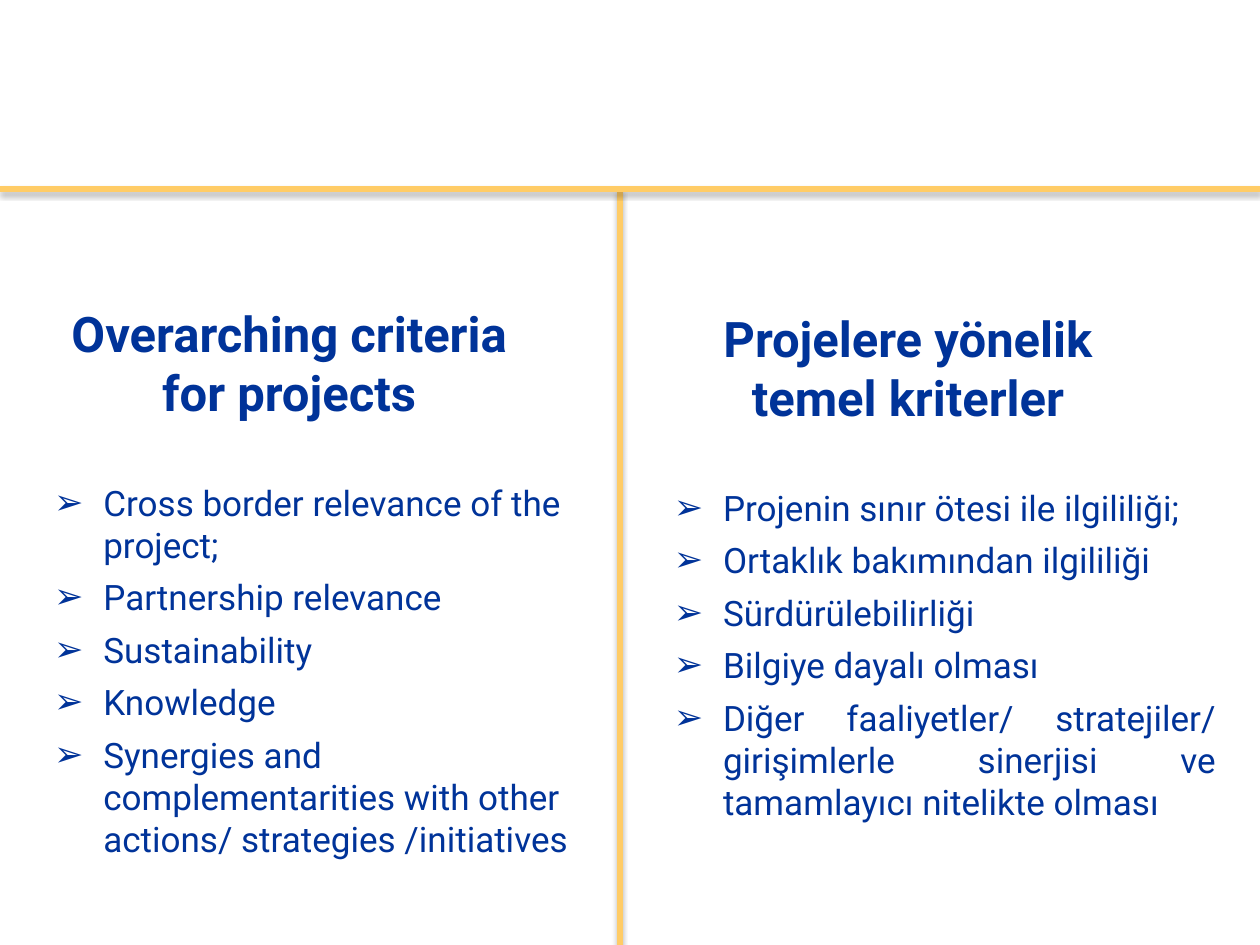
from dataclasses import dataclass

from lxml import etree
from pptx import Presentation
from pptx import util as u
from pptx.dml.color import RGBColor
from pptx.enum import shapes, text
from pptx.oxml import ns


@dataclass(frozen=True)
class Theme:
    font: str = "Roboto"
    ink: RGBColor = RGBColor(0x00, 0x33, 0x99)
    rule: RGBColor = RGBColor(0xFF, 0xCC, 0x66)
    shadow: str = "000000"
    heading_size: u.Pt = u.Pt(28)
    list_size: u.Pt = u.Pt(20)
    rule_width: u.Pt = u.Pt(3)
    item_gap: u.Pt = u.Pt(6)


@dataclass(frozen=True)
class Column:
    heading: str
    items: tuple[str, ...]
    heading_left: float
    heading_top: float
    list_left: float
    list_top: float
    alignment: text.PP_ALIGN


THEME = Theme()
INDENT = u.Inches(0.39)
HEADING_SIZE = (3.75, 2.25)
LIST_SIZE = (4.5, 3.32)
RULE_TOP = 1.5
DIVIDER_LEFT = 4.92

ENGLISH = Column(
    "Overarching criteria for projects",
    (
        "Cross border relevance of the project;",
        "Partnership relevance",
        "Sustainability",
        "Knowledge",
        "Synergies and complementarities with other actions/ strategies /initiatives",
    ),
    0.42, 1.75, 0.33, 3.77, text.PP_ALIGN.LEFT,
)
TURKISH = Column(
    "Projelere yönelik temel kriterler",
    (
        "Projenin sınır ötesi ile ilgililiği;",
        "Ortaklık bakımından ilgililiği",
        "Sürdürülebilirliği",
        "Bilgiye dayalı olması",
        "Diğer faaliyetler/ stratejiler/ girişimlerle sinerjisi ve "
        "tamamlayıcı nitelikte olması",
    ),
    5.33, 1.79, 5.25, 3.81, text.PP_ALIGN.JUSTIFY,
)


def place(box, left: float, top: float, size: tuple[float, float]) -> None:
    box.left, box.top = u.Inches(left), u.Inches(top)
    box.width, box.height = map(u.Inches, size)
    box.text_frame.word_wrap = True
    box.text_frame.auto_size = text.MSO_AUTO_SIZE.NONE


def style_runs(para, size: u.Pt, bold: bool) -> None:
    for span in para.runs:
        span.font.name = THEME.font
        span.font.size = size
        span.font.bold = bold
        span.font.color.rgb = THEME.ink


def add_bullet(para) -> None:
    """Give the paragraph an arrowhead bullet with a hanging indent."""
    properties = para._p.get_or_add_pPr()
    properties.set("marL", str(INDENT))
    properties.set("indent", str(-INDENT))
    etree.SubElement(properties, ns.qn("a:buFont"), typeface="Arial")
    etree.SubElement(properties, ns.qn("a:buChar"), char="➢")


def fill_column(column: Column, heading_box, list_box) -> None:
    place(heading_box, column.heading_left, column.heading_top, HEADING_SIZE)
    frame = heading_box.text_frame
    frame.text = column.heading
    frame.vertical_anchor = text.MSO_ANCHOR.MIDDLE
    frame.paragraphs[0].alignment = text.PP_ALIGN.CENTER
    style_runs(frame.paragraphs[0], THEME.heading_size, True)

    place(list_box, column.list_left, column.list_top, LIST_SIZE)
    frame = list_box.text_frame
    frame.text = "\n".join(column.items)
    frame.vertical_anchor = text.MSO_ANCHOR.TOP
    for index, para in enumerate(frame.paragraphs):
        add_bullet(para)
        para.alignment = column.alignment
        para.space_before = THEME.item_gap if index else u.Pt(0)
        style_runs(para, THEME.list_size, False)


def add_rule(page, start: tuple[float, float], end: tuple[float, float]) -> None:
    """Draw a straight line with a soft shadow below it."""
    rule = page.shapes.add_connector(
        shapes.MSO_CONNECTOR.STRAIGHT, *map(u.Inches, start + end)
    )
    rule.line.color.rgb = THEME.rule
    rule.line.width = THEME.rule_width
    effects = etree.SubElement(rule._element.spPr, ns.qn("a:effectLst"))
    shadow = etree.SubElement(
        effects, ns.qn("a:outerShdw"), blurRad=str(u.Pt(3.1)),
        dist=str(u.Pt(1.8)), dir="5400000", rotWithShape="0",
    )
    color = etree.SubElement(shadow, ns.qn("a:srgbClr"), val=THEME.shadow)
    etree.SubElement(color, ns.qn("a:alpha"), val="35000")


def main() -> None:
    deck = Presentation()
    deck.slide_width, deck.slide_height = u.Inches(10), u.Inches(7.5)
    page = deck.slides.add_slide(deck.slide_layouts[1])

    fill_column(ENGLISH, page.shapes.title, page.placeholders[1])
    add_rule(page, (DIVIDER_LEFT, RULE_TOP), (DIVIDER_LEFT, 7.5))
    add_rule(page, (0, RULE_TOP), (10, RULE_TOP))
    heading_box, list_box = (page.shapes.add_textbox(0, 0, 0, 0) for _ in range(2))
    fill_column(TURKISH, heading_box, list_box)

    deck.save("out.pptx")


if __name__ == "__main__":
    main()
